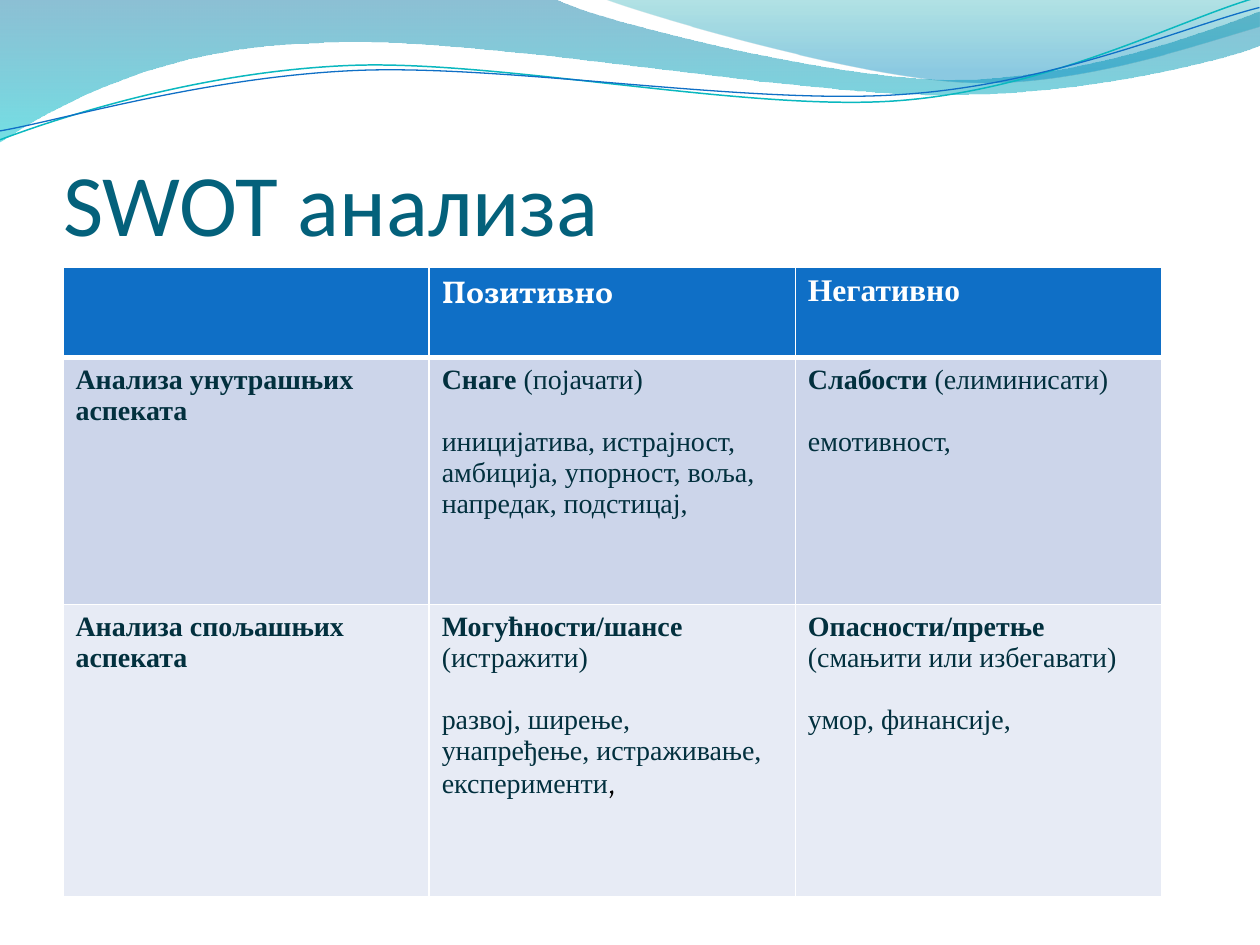
from lxml import etree
from pptx import Presentation
from pptx.dml.color import RGBColor
from pptx.enum import text
from pptx.oxml.ns import qn
from pptx.util import Inches, Pt

THEME = {
    "title": ("Calibri", 50, "04617B"),
    "head": ("Times New Roman", 18, "FFFFFF"),
    "body": ("Times New Roman", 16, "02303E"),
    "rows": ["0F6FC6", "CCD5EA", "E7EBF5"],
    "border": "FFFFFF",
    "accent_font": "Vollkorn",
    "black": "000000",
}
TITLE = "SWOT анализа"
# Each cell: paragraphs of (words, bold) runs.
CELLS = [
    [[], [[("Позитивно", True)]], [[("Негативно", True)]]],
    [
        [[("Анализа унутрашњих аспеката", True)]],
        [[("Снаге ", True), ("(појачати)", False)],
         [("иницијатива, истрајност, амбиција, упорност, воља, напредак, подстицај,", False)]],
        [[("Слабости ", True), ("(елиминисати)", False)], [("емотивност,", False)]],
    ],
    [
        [[("Анализа спољашњих аспеката", True)]],
        [[("Могућности/шансе ", True), ("(истражити)", False)],
         [("развој, ширење, унапређење, истраживање, експерименти", False), (",", False)]],
        [[("Опасности/претње ", True), ("(смањити или избегавати)", False)],
         [("умор, финансије,", False)]],
    ],
]
ROW_HEIGHTS = [0.72, 1.96, 2.32]
TABLE_LEFT, TABLE_TOP, TABLE_WIDTH = 0.5, 2.12, 8.72

# Each segment holds one point (line) or three points (Bezier curve).
# Gradient stops: position, colour, opacity in percent.
BANDS = [
    ((0, 0), [[(4.4, -0.01)],
              [(4.76, 0.17), (6.64, 0.63), (7.58, 0.63)],
              [(8.53, 0.63), (9.58, 0.26), (10, 0.09)],
              [(10.01, 0.36)],
              [(9.83, 0.44), (8.7, 0.76), (7.46, 0.75)],
              [(6.22, 0.75), (3.82, 0.28), (2.57, 0.34)],
              [(1.29, 0.36), (0.46, 0.83), (-0.01, 1.13)]],
     [(0, "0074A1", 45), (1, "00C6CF", 55)]),
    ((4.79, -0.01), [[(5.09, 0.11), (6.82, 0.62), (7.69, 0.65)],
                     [(8.56, 0.69), (9.61, 0.32), (10, 0.21)],
                     [(10, 0)]],
     [(0, "00A1A9", 30), (0.8, "008BBF", 45)]),
]
STRANDS = [
    ((0, 1.11), [[(0.48, 0.93), (1.58, 0.57), (2.77, 0.52)],
                 [(3.95, 0.47), (5.93, 0.89), (7.13, 0.8)],
                 [(8.33, 0.71), (9.38, 0.15), (9.98, -0.02)]], "0AB8BF", 0.85),
    ((0, 1.04), [[(0.47, 0.96), (1.64, 0.61), (2.83, 0.56)],
                 [(4.03, 0.51), (5.97, 0.84), (7.17, 0.75)],
                 [(8.36, 0.67), (9.41, 0.21), (10, 0.06)]], "0F6FC6", 0.75),
]


def rgb(value):
    return RGBColor.from_string(value)


def add_run(p, words, style, bold=False):
    r = p.add_run()
    r.text = words
    name, size, color = style
    r.font.name, r.font.size, r.font.bold = name, Pt(size), bold
    r.font.color.rgb = rgb(color)


def add_curve(slide, start, segments, close):
    """Build a freeform, then merge the points of each curve into a cubic Bezier."""
    builder = slide.shapes.build_freeform(*start, scale=Inches(1) * 1.0)
    # Local units are thousandths of an inch, which keeps decimals exact.
    builder = slide.shapes.build_freeform(
        *[round(v * 1000) for v in start], scale=Inches(0.001))
    points = [(round(x * 1000), round(y * 1000)) for seg in segments for x, y in seg]
    builder.add_line_segments(points, close=close)
    sp = builder.convert_to_shape()
    sp.shadow.inherit = False
    steps = iter(list(sp._element.iter(qn("a:lnTo"))))
    for seg in segments:
        nodes = [next(steps) for _ in seg]
        if len(nodes) == 3:
            curve = etree.Element(qn("a:cubicBezTo"))
            nodes[0].addprevious(curve)
            for node in nodes:
                curve.append(node[0])
                node.getparent().remove(node)
    return sp


def add_band(slide, start, segments, stops):
    sp = add_curve(slide, start, segments, True)
    sp.line.fill.background()
    sp.fill.gradient()
    sp.fill.gradient_angle = 270
    for stop, (position, color, _) in zip(sp.fill.gradient_stops, stops):
        stop.position = position
        stop.color.rgb = rgb(color)
    colors = sp._element.spPr.find(qn("a:gradFill")).iter(qn("a:srgbClr"))
    for node, (_, _, opacity) in zip(list(colors), stops):
        etree.SubElement(node, qn("a:alpha"), val=str(opacity * 1000))


def add_strand(slide, start, segments, color, width):
    sp = add_curve(slide, start, segments, False)
    sp.fill.background()
    sp.line.color.rgb = rgb(color)
    sp.line.width = Pt(width)


def set_borders(cell, bottom):
    props = cell._tc.get_or_add_tcPr()
    for i, (side, width) in enumerate([("L", 1), ("R", 1), ("T", 1), ("B", bottom)]):
        ln = etree.Element(qn("a:ln" + side), w=str(Pt(width)))
        fill = etree.SubElement(ln, qn("a:solidFill"))
        etree.SubElement(fill, qn("a:srgbClr"), val=THEME["border"])
        props.insert(i, ln)


def run_style(words, row):
    font, size, color = THEME["body" if row else "head"]
    if words == "Позитивно":
        font = THEME["accent_font"]
    elif words == ",":
        font, color = THEME["accent_font"], THEME["black"]
    return font, size, color


def add_swot_table(slide):
    count = len(CELLS[0])
    table = slide.shapes.add_table(
        len(CELLS), count, Inches(TABLE_LEFT), Inches(TABLE_TOP),
        Inches(TABLE_WIDTH), Inches(sum(ROW_HEIGHTS))).table
    for column in table.columns:
        column.width = Inches(TABLE_WIDTH / count)
    for i, row in enumerate(CELLS):
        table.rows[i].height = Inches(ROW_HEIGHTS[i])
        for j, paragraphs in enumerate(row):
            cell = table.cell(i, j)
            cell.fill.solid()
            cell.fill.fore_color.rgb = rgb(THEME["rows"][i])
            set_borders(cell, 1 if i else 3)
            tf = cell.text_frame
            for k, runs in enumerate(paragraphs):
                p = tf.add_paragraph() if k else tf.paragraphs[0]
                if k:
                    p.space_before = Pt(17.7)
                for words, bold in runs:
                    add_run(p, words, run_style(words, i), bold)


def set_title(slide):
    sp = slide.shapes.title
    sp.left, sp.top, sp.width, sp.height = map(Inches, (0.5, 0.77, 9, 1.25))
    tf = sp.text_frame
    tf.word_wrap = True
    tf.vertical_anchor = text.MSO_ANCHOR.BOTTOM
    tf.margin_left = tf.margin_right = tf.margin_bottom = 0
    tf.margin_top = Inches(0.05)
    p = tf.paragraphs[0]
    p.alignment = text.PP_ALIGN.LEFT
    add_run(p, TITLE, THEME["title"])


def main():
    prs = Presentation()
    prs.slide_width, prs.slide_height = Inches(10), Inches(7.5)
    slide = prs.slides.add_slide(prs.slide_layouts[5])
    for band in BANDS:
        add_band(slide, *band)
    for strand in STRANDS:
        add_strand(slide, *strand)
    set_title(slide)
    add_swot_table(slide)
    prs.save("out.pptx")


if __name__ == "__main__":
    main()
